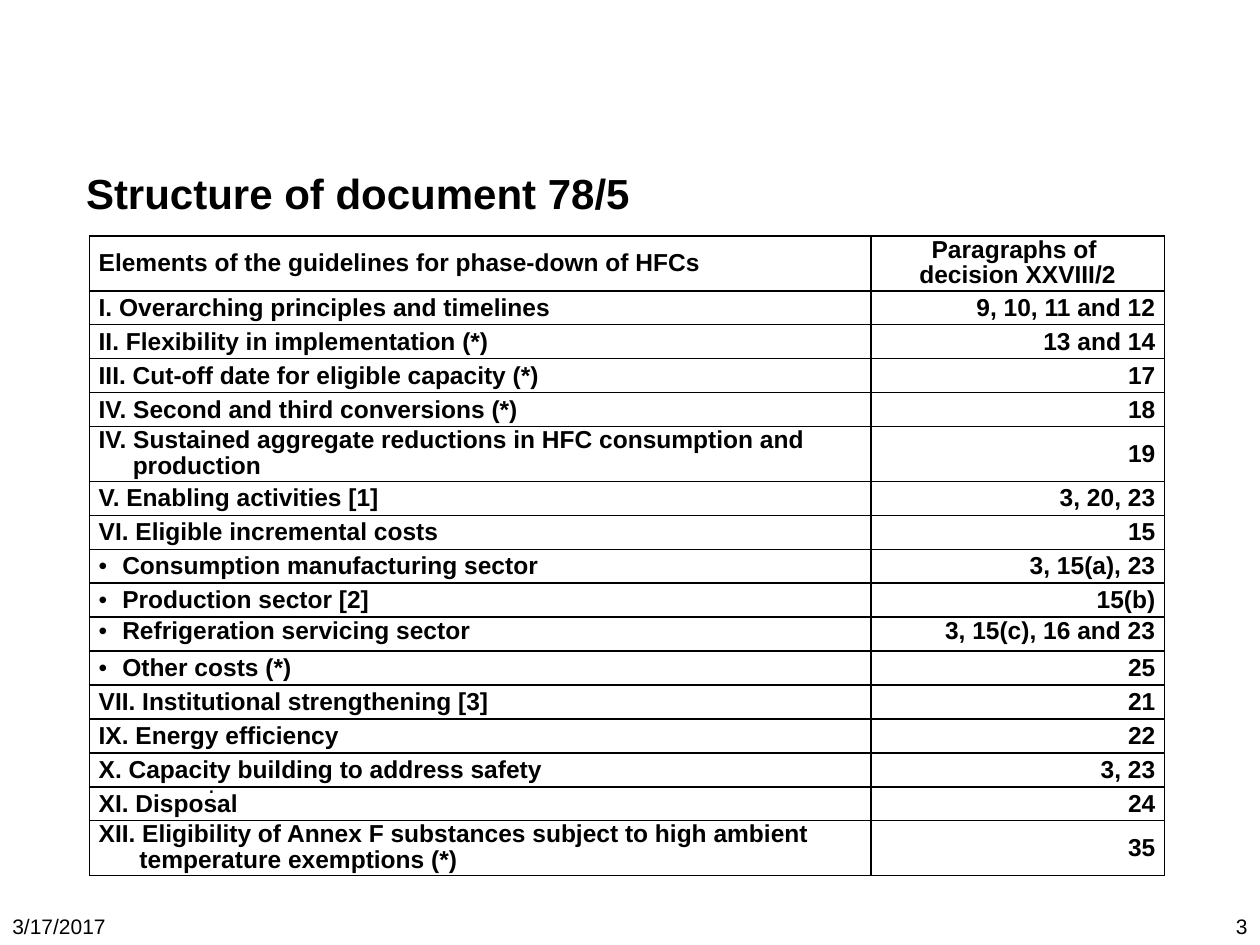
from dataclasses import dataclass

from lxml.etree import SubElement
from pptx import Presentation
from pptx.dml.color import RGBColor
from pptx.enum.text import MSO_ANCHOR as Anchor, PP_ALIGN as Align
from pptx.oxml.ns import qn
from pptx.util import Pt

BLACK = RGBColor(0, 0, 0)
FONT = "Arial"
BODY_SIZE = 14
ROW_HEIGHT = 19.4
TALL_ROW_HEIGHT = 31.4
TALL_ROW_LEADING = 14.8
BULLET_INDENT = 13.5


@dataclass
class Element:
    title: str
    paragraphs: str
    continuation: str = ""
    continuation_indent: float = 0
    bullet: bool = False
    anchor: Anchor = Anchor.MIDDLE


@dataclass
class Label:
    text: str
    left: float
    top: float
    width: float
    height: float
    size: float
    bold: bool = False
    align: Align = Align.LEFT
    anchor: Anchor = Anchor.BOTTOM
    inset_x: float = 7.2
    inset_y: float = 3.6


STRAY_DOT = Label(".", 119, 439.2, 14, 17, BODY_SIZE,
                  anchor=Anchor.TOP, inset_x=0, inset_y=0)
LABELS = [
    Label("3", 660, 504, 60, 36, 12, align=Align.RIGHT),
    Label("3/17/2017", 0, 504, 150, 36, 12),
    Label("Structure of document 78/5", 42.7, 95.4, 634, 29.5, 24, bold=True,
          anchor=Anchor.MIDDLE, inset_x=6.5),
]

HEADING = "Elements of the guidelines for phase-down of HFCs"
DECISION_LINES = ["Paragraphs of ", "decision XXVIII/2"]
ELEMENTS = [
    Element("I. Overarching principles and timelines", "9, 10, 11 and 12"),
    Element("II. Flexibility in implementation (*)", "13 and 14"),
    Element("III. Cut-off date for eligible capacity (*)", "17"),
    Element("IV. Second and third conversions (*)", "18"),
    Element("IV. Sustained aggregate reductions in HFC consumption and", "19",
            "production", 19.5),
    Element("V. Enabling activities [1]", "3, 20, 23"),
    Element("VI. Eligible incremental costs", "15"),
    Element("Consumption manufacturing sector", "3, 15(a), 23", bullet=True),
    Element("Production sector [2]", "15(b)", bullet=True),
    Element("Refrigeration servicing sector", "3, 15(c), 16 and 23",
            bullet=True, anchor=Anchor.TOP),
    Element("Other costs (*)", "25", bullet=True),
    Element("VII. Institutional strengthening [3]", "21"),
    Element("IX. Energy efficiency", "22"),
    Element("X. Capacity building to address safety", "3, 23"),
    Element("XI. Disposal", "24"),
    Element("XII. Eligibility of Annex F substances subject to high ambient",
            "35", "temperature exemptions (*)", 23.3),
]


def add_text(paragraph, text: str, size: float, bold: bool, align: Align) -> None:
    paragraph.alignment = align
    run = paragraph.add_run()
    run.text = text
    font = run.font
    font.name, font.size, font.bold = FONT, Pt(size), bold
    font.color.rgb = BLACK


def add_label(slide, label: Label) -> None:
    box = slide.shapes.add_textbox(Pt(label.left), Pt(label.top),
                                   Pt(label.width), Pt(label.height))
    frame = box.text_frame
    frame.word_wrap = True
    frame.vertical_anchor = label.anchor
    frame.margin_left = frame.margin_right = Pt(label.inset_x)
    frame.margin_top = frame.margin_bottom = Pt(label.inset_y)
    add_text(frame.paragraphs[0], label.text, label.size, label.bold, label.align)


def set_indent(paragraph, left: float, first: float = 0) -> None:
    properties = paragraph._p.get_or_add_pPr()
    properties.set("marL", str(int(Pt(left))))
    properties.set("indent", str(int(Pt(first))))


def add_bullet(paragraph) -> None:
    set_indent(paragraph, BULLET_INDENT, -BULLET_INDENT)
    properties = paragraph._p.get_or_add_pPr()
    SubElement(properties, qn("a:buFont"), typeface=FONT)
    SubElement(properties, qn("a:buChar"), char="•")


def add_borders(cell) -> None:
    properties = cell._tc.get_or_add_tcPr()
    for side in ("a:lnL", "a:lnR", "a:lnT", "a:lnB"):
        line = SubElement(properties, qn(side), w=str(int(Pt(1))))
        fill = SubElement(line, qn("a:solidFill"))
        SubElement(fill, qn("a:srgbClr"), val=str(BLACK))


def fill_cell(cell, lines: list[str], align: Align = Align.LEFT,
              anchor: Anchor = Anchor.MIDDLE) -> list:
    cell.vertical_anchor = anchor
    cell.margin_left = cell.margin_right = Pt(5.2)
    cell.margin_top = cell.margin_bottom = Pt(0)
    add_borders(cell)
    cell.fill.background()
    frame = cell.text_frame
    for number, text in enumerate(lines):
        paragraph = frame.add_paragraph() if number else frame.paragraphs[0]
        if len(lines) > 1:
            paragraph.line_spacing = Pt(TALL_ROW_LEADING)
        add_text(paragraph, text, BODY_SIZE, True, align)
    return list(frame.paragraphs)


def add_structure_table(slide) -> None:
    row_count = len(ELEMENTS) + 1
    table = slide.shapes.add_table(row_count, 2, Pt(51.2), Pt(134.8), Pt(614.2),
                                   Pt(ROW_HEIGHT * row_count)).table
    table.first_row = table.horz_banding = False
    table.columns[0].width, table.columns[1].width = Pt(446.4), Pt(167.8)

    # Heading row
    table.rows[0].height = Pt(TALL_ROW_HEIGHT)
    fill_cell(table.cell(0, 0), [HEADING])
    fill_cell(table.cell(0, 1), DECISION_LINES, Align.CENTER)

    # One row for each element of the guidelines
    for row, element in enumerate(ELEMENTS, start=1):
        lines = [element.title]
        if element.continuation:
            lines.append(element.continuation)
        table.rows[row].height = Pt(TALL_ROW_HEIGHT if len(lines) > 1 else ROW_HEIGHT)
        paragraphs = fill_cell(table.cell(row, 0), lines, anchor=element.anchor)
        if element.bullet:
            add_bullet(paragraphs[0])
        if element.continuation:
            set_indent(paragraphs[1], element.continuation_indent)
        fill_cell(table.cell(row, 1), [element.paragraphs], Align.RIGHT, element.anchor)


def main() -> None:
    deck = Presentation()
    deck.slide_width, deck.slide_height = Pt(720), Pt(540)
    slide = deck.slides.add_slide(deck.slide_layouts[6])

    # Dot behind the table, then the table, then title and footer
    add_label(slide, STRAY_DOT)
    add_structure_table(slide)
    for label in LABELS:
        add_label(slide, label)
    deck.save("out.pptx")


if __name__ == "__main__":
    main()
